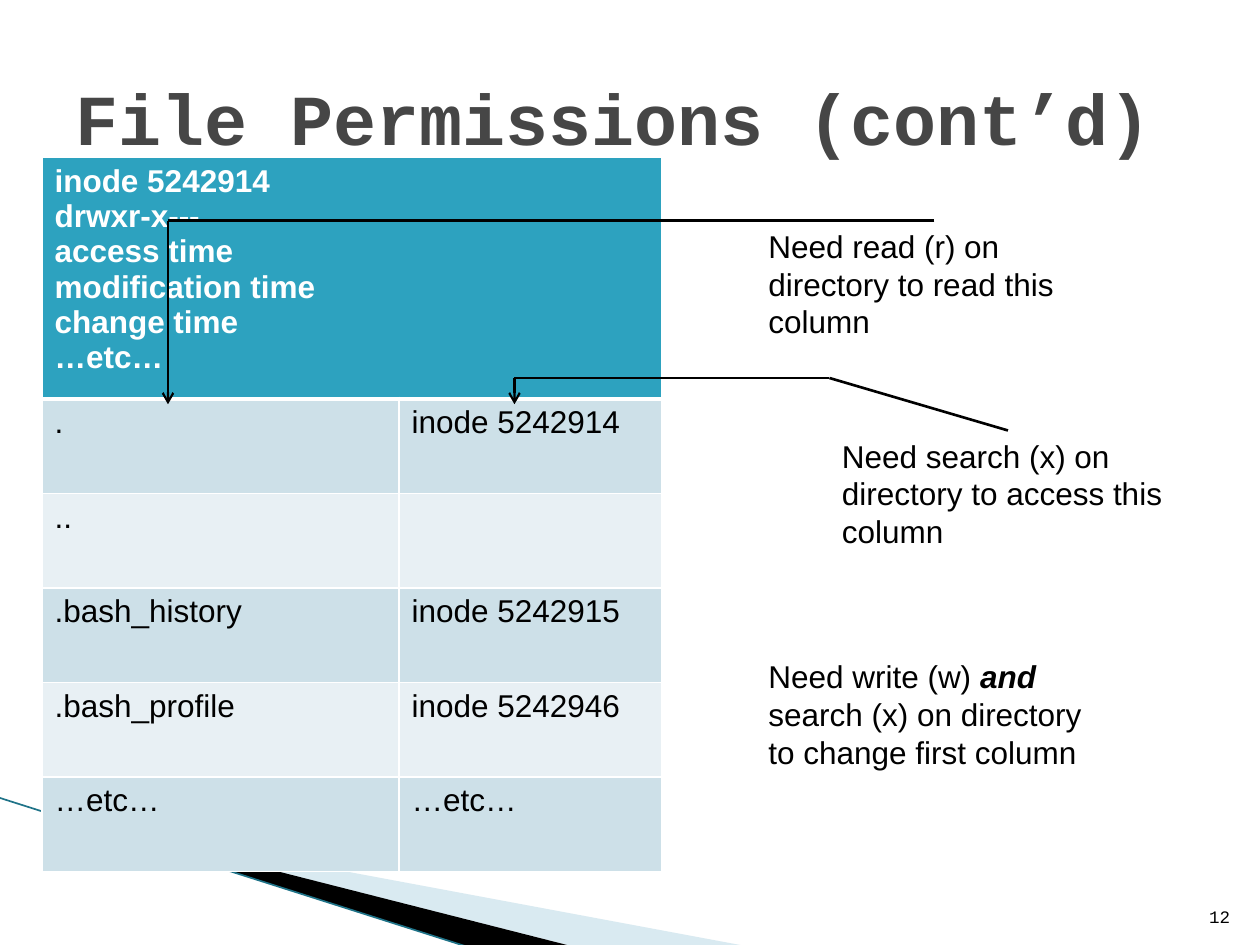
from lxml.etree import SubElement
from pptx import Presentation
from pptx.dml.color import RGBColor
from pptx.enum.shapes import MSO_CONNECTOR
from pptx.enum.text import MSO_ANCHOR, PP_ALIGN
from pptx.oxml.ns import qn
from pptx.util import Pt

COLORS = {
    "white": "FFFFFF", "black": "000000", "title": "464646", "header": "2DA2BF",
    "odd": "CDE0E8", "even": "E8F0F4", "pale": "A0CBDC", "teal": "1F7388",
}
TITLE = "File Permissions (cont’d)"
PAGE_NUMBER = "12"
HEADER = ["inode 5242914", "drwxr-x---", "access time",
          "modification time", "change time", "…etc…"]
ENTRIES = [
    (".", "inode 5242914"),
    ("..", ""),
    (".bash_history", "inode 5242915"),
    (".bash_profile", "inode 5242946"),
    ("…etc…", "…etc…"),
]
# left, top, spans of (text, emphasised)
NOTES = [
    (432, 126, [("Need read (r) on directory to read this column", False)]),
    (474, 246, [("Need search (x) on directory to access this column", False)]),
    (432, 372, [("Need write (w) ", False), ("and", True),
                (" search (x) on directory to change first column", False)]),
]
# corner points; the last leg of each route carries the arrowhead
ROUTES = [
    [(534, 126), (96, 126), (96, 231)],
    [(576, 246), (474, 216), (294, 216), (294, 231)],
]
# colour, opacity in percent, corner points
BANDS = [
    ("pale", 40, [(39.6, 468.5), (428.4, 541), (328.3, 541), (39.6, 468)]),
    ("black", 100, [(38.2, 467.3), (328, 541), (267.5, 541.3), (39, 468)]),
]
COLUMN_WIDTHS = [204, 150]
HEADER_HEIGHT, ROW_HEIGHT = 138, 54


def rgb(name):
    return RGBColor.from_string(COLORS[name])


def write(frame, paragraphs, size=18, font="Arial", color="black", bold=False,
          align=PP_ALIGN.LEFT):
    """Fill a frame with paragraphs, each a list of (text, emphasised) spans."""
    frame.word_wrap = True
    for index, spans in enumerate(paragraphs):
        para = frame.add_paragraph() if index else frame.paragraphs[0]
        para.alignment = align
        para.font.size = Pt(size)
        for text, emphasised in spans:
            span = para.add_run()
            span.text = text
            span.font.size, span.font.name = Pt(size), font
            span.font.bold = bold or emphasised
            span.font.italic = emphasised
            span.font.color.rgb = rgb(color)


def add_text(page, left, top, width, height, paragraphs,
             anchor=MSO_ANCHOR.TOP, **style):
    box = page.shapes.add_textbox(Pt(left), Pt(top), Pt(width), Pt(height))
    box.text_frame.vertical_anchor = anchor
    write(box.text_frame, paragraphs, **style)


def add_line(page, start, end, color="black", width=1.5, arrow=False):
    line = page.shapes.add_connector(MSO_CONNECTOR.STRAIGHT,
                                     *(Pt(value) for value in (*start, *end)))
    line.line.color.rgb = rgb(color)
    line.line.width = Pt(width)
    if arrow:
        SubElement(line._element.spPr.find(qn("a:ln")), qn("a:tailEnd"), type="arrow")
    SubElement(line._element.spPr, qn("a:effectLst"))


def add_band(page, color, opacity, points):
    start, *rest = [(Pt(x), Pt(y)) for x, y in points]
    builder = page.shapes.build_freeform(*start)
    builder.add_line_segments(rest, close=True)
    band = builder.convert_to_shape()
    band.shadow.inherit = False
    band.fill.solid()
    band.fill.fore_color.rgb = rgb(color)
    band.line.fill.background()
    if opacity < 100:
        tint = band._element.spPr.find(qn("a:solidFill"))[0]
        SubElement(tint, qn("a:alpha"), val=str(opacity * 1000))


def style_cell(cell, fill, bottom=1):
    """Set white borders, then the fill, in the order the schema wants."""
    properties = cell._tc.get_or_add_tcPr()
    for side, width in (("L", 1), ("R", 1), ("T", 1), ("B", bottom)):
        border = SubElement(properties, qn(f"a:ln{side}"), w=str(Pt(width)))
        paint = SubElement(border, qn("a:solidFill"))
        SubElement(paint, qn("a:srgbClr"), val=COLORS["white"])
    cell.fill.solid()
    cell.fill.fore_color.rgb = rgb(fill)


def add_directory(page):
    height = HEADER_HEIGHT + ROW_HEIGHT * len(ENTRIES)
    table = page.shapes.add_table(len(ENTRIES) + 1, len(COLUMN_WIDTHS), Pt(24), Pt(90),
                                  Pt(sum(COLUMN_WIDTHS)), Pt(height)).table
    for column, width in zip(table.columns, COLUMN_WIDTHS):
        column.width = Pt(width)
    for index, row in enumerate(table.rows):
        row.height = Pt(ROW_HEIGHT if index else HEADER_HEIGHT)
    table.cell(0, 0).merge(table.cell(0, 1))
    for cell in table.rows[0].cells:
        style_cell(cell, "header", bottom=3)
    write(table.cell(0, 0).text_frame, [[(line, False)] for line in HEADER],
          color="white", bold=True)
    for row, entry in enumerate(ENTRIES, 1):
        for column, text in enumerate(entry):
            cell = table.cell(row, column)
            style_cell(cell, "odd" if row % 2 else "even")
            write(cell.text_frame, [[(text, False)] if text else []])


def main():
    deck = Presentation()
    deck.slide_width, deck.slide_height = Pt(720), Pt(540)
    page = deck.slides.add_slide(deck.slide_layouts[6])
    for band in BANDS:
        add_band(page, *band)
    add_line(page, (0, 456), (267, 541), color="teal", width=0.95)
    add_text(page, 36, 21.6, 648, 90, [[(TITLE, False)]], MSO_ANCHOR.MIDDLE,
             size=41, font="Courier New", color="title", bold=True)
    add_text(page, 681, 504.5, 29, 29, [[(PAGE_NUMBER, False)]], MSO_ANCHOR.BOTTOM,
             size=10, font="Courier New", align=PP_ALIGN.RIGHT)
    add_directory(page)
    for left, top, spans in NOTES:
        add_text(page, left, top, 204.5, 72.7, [spans])
    for route in ROUTES:
        for start, end in zip(route, route[1:]):
            last = end == route[-1]
            add_line(page, start, end, width=1.25 if last else 1.5, arrow=last)
    deck.save("out.pptx")


if __name__ == "__main__":
    main()
